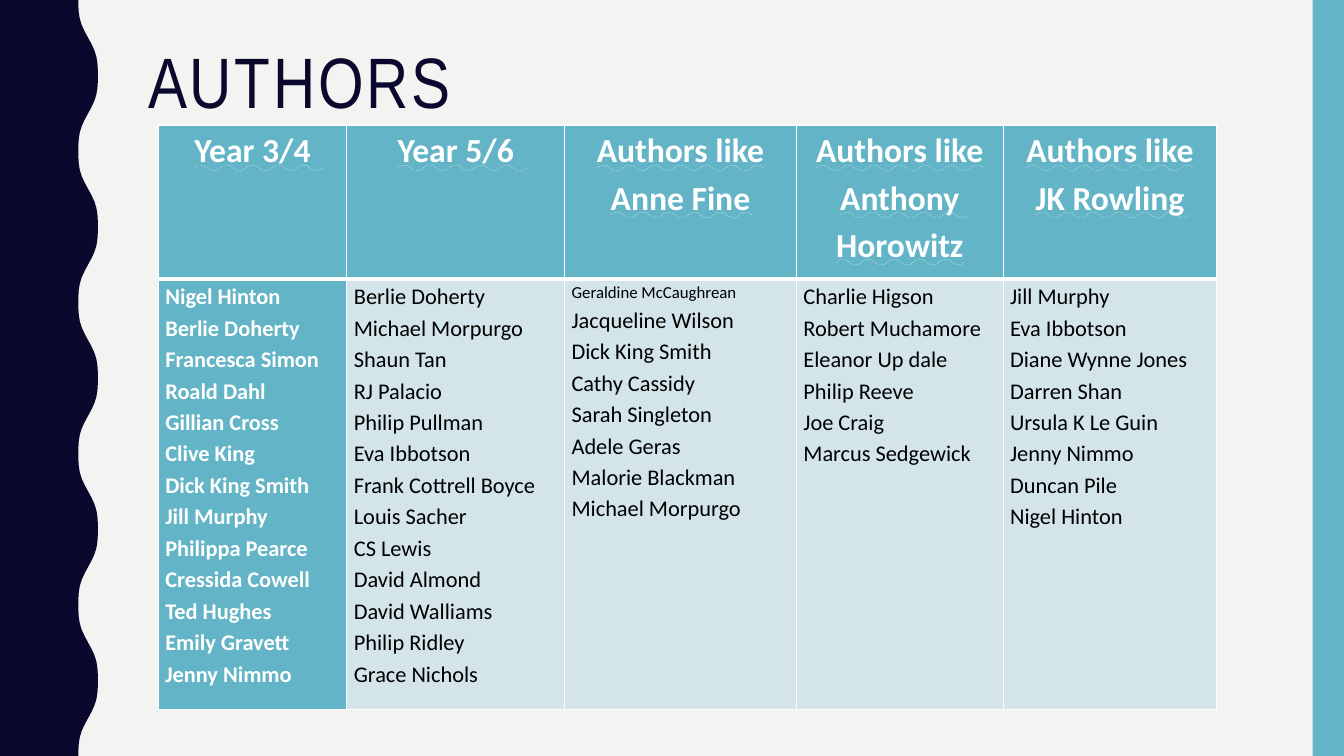
from dataclasses import dataclass
from math import cos, pi

from lxml import etree
from pptx import Presentation
from pptx.dml.color import RGBColor
from pptx.enum.shapes import MSO_SHAPE
from pptx.enum.text import MSO_ANCHOR, MSO_UNDERLINE, PP_ALIGN
from pptx.oxml.ns import qn
from pptx.util import Emu, Inches, Pt

RECTANGLE = MSO_SHAPE.RECTANGLE
TOP = MSO_ANCHOR.TOP
LEFT, CENTER = PP_ALIGN.LEFT, PP_ALIGN.CENTER
WAVY = MSO_UNDERLINE.WAVY_LINE

PAPER = RGBColor(0xF3, 0xF3, 0xF2)
NAVY = RGBColor(0x0B, 0x08, 0x2E)
TEAL = RGBColor(0x62, 0xB4, 0xC6)
PALE = RGBColor(0xD3, 0xE5, 0xEA)
WHITE = RGBColor(0xFF, 0xFF, 0xFF)
BLACK = RGBColor(0x00, 0x00, 0x00)

SLIDE_WIDTH, SLIDE_HEIGHT = Inches(13.33), Inches(7.5)
WAVE_COUNT, STEPS_PER_WAVE = 5, 24
HEADER_SHARE, BODY_SHARE = 20.4, 56.93
THIN, THICK = Pt(1), Pt(3)


@dataclass(frozen=True)
class AuthorColumn:
    heading: str
    share: float  # percent of the slide's width
    authors: tuple[str, ...]
    first_size: int = 16


@dataclass(frozen=True)
class CellStyle:
    fill: RGBColor
    color: RGBColor
    size: int
    bold: bool
    alignment: PP_ALIGN
    underline: MSO_UNDERLINE | None
    top_line: int
    bottom_line: int


HEADER = CellStyle(TEAL, WHITE, 24, True, CENTER, WAVY, THIN, THICK)
FIRST_BODY = CellStyle(TEAL, WHITE, 16, True, LEFT, None, THICK, THIN)
BODY = CellStyle(PALE, BLACK, 16, False, LEFT, None, THICK, THIN)

COLUMNS = (
    AuthorColumn("Year 3/4", 14.03, (
        "Nigel Hinton", "Berlie Doherty", "Francesca Simon", "Roald Dahl",
        "Gillian Cross", "Clive King", "Dick King Smith", "Jill Murphy",
        "Philippa Pearce", "Cressida Cowell", "Ted Hughes", "Emily Gravett",
        "Jenny Nimmo")),
    AuthorColumn("Year 5/6", 16.2, (
        "Berlie Doherty", "Michael Morpurgo", "Shaun Tan", "RJ Palacio",
        "Philip Pullman", "Eva Ibbotson", "Frank Cottrell Boyce",
        "Louis Sacher", "CS Lewis", "David Almond", "David Walliams",
        "Philip Ridley", "Grace Nichols")),
    AuthorColumn("Authors like Anne Fine", 17.25, (
        "Geraldine McCaughrean", "Jacqueline Wilson", "Dick King Smith",
        "Cathy Cassidy", "Sarah Singleton", "Adele Geras",
        "Malorie Blackman", "Michael Morpurgo"), first_size=12),
    AuthorColumn("Authors like Anthony Horowitz", 15.38, (
        "Charlie Higson", "Robert Muchamore", "Eleanor Up dale",
        "Philip Reeve", "Joe Craig", "Marcus Sedgewick")),
    AuthorColumn("Authors like JK Rowling", 15.9, (
        "Jill Murphy", "Eva Ibbotson", "Diane Wynne Jones", "Darren Shan",
        "Ursula K Le Guin", "Jenny Nimmo", "Duncan Pile", "Nigel Hinton")),
)


def across(percent: float) -> Emu:
    return Emu(round(SLIDE_WIDTH * percent / 100))


def down(percent: float) -> Emu:
    return Emu(round(SLIDE_HEIGHT * percent / 100))


def paint(shape, color: RGBColor) -> None:
    shape.shadow.inherit = False
    shape.fill.solid()
    shape.fill.fore_color.rgb = color
    shape.line.fill.background()


def draw_edges(page) -> None:
    # Wavy left edge: a cosine with slightly flattened crests
    steps = WAVE_COUNT * STEPS_PER_WAVE
    wave = []
    for step in range(steps + 1):
        angle = 2 * pi * step / STEPS_PER_WAVE
        edge = 6.56 - 0.8 * cos(angle) + 0.07 * cos(3 * angle)
        wave.append((across(edge), down(100 * step / steps)))
    builder = page.shapes.build_freeform(0, 0)
    builder.add_line_segments([*wave, (0, SLIDE_HEIGHT)], close=True)
    paint(builder.convert_to_shape(), NAVY)

    # Straight right edge
    bar = page.shapes.add_shape(
        RECTANGLE, across(97.67), 0, across(2.33), SLIDE_HEIGHT)
    paint(bar, TEAL)


def draw_title(page, text: str) -> None:
    box = page.shapes.add_textbox(
        across(10.28), down(5.6), across(83.5), down(21.73))
    box.text_frame.word_wrap = True
    box.text_frame.vertical_anchor = TOP
    para = box.text_frame.paragraphs[0]
    para.text = text
    para.line_spacing = 0.9
    span = para.runs[0]
    span.font.name = "Arial Narrow"
    span.font.size = Pt(51)
    span.font.color.rgb = NAVY
    span.font._element.set("spc", "200")


def draw_borders(cell, style: CellStyle) -> None:
    properties = cell._tc.get_or_add_tcPr()
    widths = {"a:lnL": THIN, "a:lnR": THIN,
              "a:lnT": style.top_line, "a:lnB": style.bottom_line}
    for position, (tag, width) in enumerate(widths.items()):
        line = etree.Element(qn(tag), w=str(int(width)))
        fill = etree.SubElement(line, qn("a:solidFill"))
        etree.SubElement(fill, qn("a:srgbClr"), val=str(WHITE))
        properties.insert(position, line)


def fill_cell(cell, lines: tuple[str, ...], style: CellStyle) -> None:
    cell.fill.solid()
    cell.fill.fore_color.rgb = style.fill
    cell.margin_left = cell.margin_right = Inches(0.07)
    cell.margin_top = cell.margin_bottom = 0
    cell.vertical_anchor = TOP
    cell.text_frame.text = "\n".join(lines)
    for para in cell.text_frame.paragraphs:
        para.alignment = style.alignment
        para.line_spacing = 1.15
        font = para.runs[0].font
        font.name = "Calibri"
        font.size = Pt(style.size)
        font.bold = style.bold
        font.underline = style.underline
        font.color.rgb = style.color
    draw_borders(cell, style)


def draw_table(page) -> None:
    width = across(sum(column.share for column in COLUMNS))
    table = page.shapes.add_table(
        2, len(COLUMNS), across(11.78), down(16.53),
        width, down(HEADER_SHARE + BODY_SHARE)).table
    table.rows[0].height = down(HEADER_SHARE)
    table.rows[1].height = down(BODY_SHARE)
    for index, column in enumerate(COLUMNS):
        table.columns[index].width = across(column.share)
        fill_cell(table.cell(0, index), (column.heading,), HEADER)
        body = table.cell(1, index)
        fill_cell(body, column.authors, BODY if index else FIRST_BODY)
        first_span = body.text_frame.paragraphs[0].runs[0]
        first_span.font.size = Pt(column.first_size)


def main() -> None:
    deck = Presentation()
    deck.slide_width, deck.slide_height = SLIDE_WIDTH, SLIDE_HEIGHT
    page = deck.slides.add_slide(deck.slide_layouts[6])
    page.background.fill.solid()
    page.background.fill.fore_color.rgb = PAPER
    draw_edges(page)
    draw_title(page, "AUTHORS")
    draw_table(page)
    deck.save("out.pptx")


if __name__ == "__main__":
    main()
